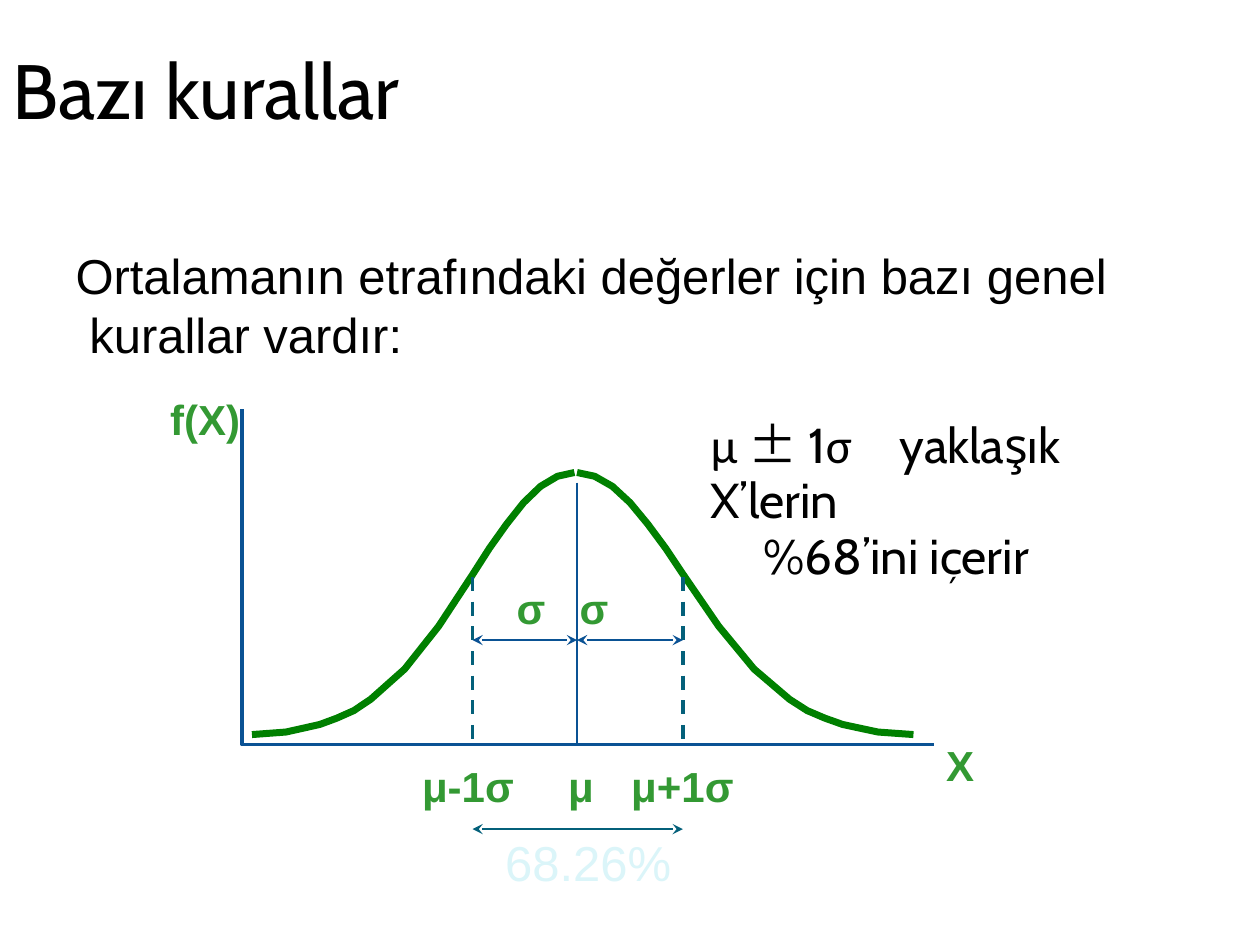
from typing import NamedTuple, Optional

from lxml import etree
from pptx import Presentation
from pptx import util as u
from pptx.dml.color import RGBColor
from pptx.enum import dml, shapes, text
from pptx.oxml import ns

COLORS = {"ink": "000000", "label": "339933", "curve": "008000",
          "axis": "0A5294", "bound": "04607A", "share": "DBF5F9"}

# Key positions of the diagram, in inches
AXIS_X, AXIS_TOP, AXIS_Y, AXIS_END = 1.92, 3.25, 5.91, 7.41
MEAN, LOW, HIGH = 4.58, 3.75, 5.42

# Half of the bell: grid steps away from the mean, and heights
STEPS = (0, 1, 2, 3, 4, 5, 6, 8, 10, 12, 13, 14, 15, 16, 17, 19)
BELL = (3.75, 3.78, 3.86, 3.99, 4.16, 4.35, 4.56, 4.97,
        5.31, 5.55, 5.64, 5.7, 5.75, 5.78, 5.81, 5.83)


class Label(NamedTuple):
    words: str
    left: float
    top: float
    width: float
    tab: Optional[float] = None


class Line(NamedTuple):
    start: tuple
    end: tuple
    color: str
    width: float
    dashed: bool = False
    arrows: bool = False


LABELS = [
    Label("f(X)", 1.34, 3.11, 0.58),
    Label("X", 7.5, 5.86, 0.25),
    Label("μ\tμ+1σ", 4.5, 6.03, 1.51, 0.68),
    Label("μ-1σ", 3.34, 6.03, 0.76),
    Label("σ\tσ", 4.09, 4.61, 1.01, 0.76),
]

LINES = [
    Line((MEAN, 3.83), (MEAN, AXIS_Y), "axis", 1),
    *[Line((x, 4.58), (x, AXIS_Y), "bound", 2, dashed=True)
      for x in (LOW, HIGH)],
    Line((LOW, 5.08), (MEAN, 5.08), "axis", 1, arrows=True),
    Line((MEAN, 5.08), (HIGH, 5.08), "axis", 1, arrows=True),
    Line((LOW, 6.58), (HIGH, 6.58), "bound", 1, arrows=True),
]


def rgb(name: str) -> RGBColor:
    return RGBColor.from_string(COLORS[name])


def add_box(s, left: float, top: float, width: float, height: float,
            wrap: bool = True):
    """Add an empty text box and return its text frame."""
    box = s.shapes.add_textbox(*map(u.Inches, (left, top, width, height)))
    tf = box.text_frame
    tf.margin_left = tf.margin_right = tf.margin_bottom = 0
    tf.margin_top = u.Inches(0.01)
    tf.word_wrap = wrap
    tf.auto_size = text.MSO_AUTO_SIZE.NONE
    return tf


def write(p, *runs, size: float, color: str = "ink", bold: bool = False,
          before: float = 0, spacing: Optional[float] = None,
          left: float = 0.01, indent: float = 0, tab: Optional[float] = None):
    """Fill a paragraph with (words, font) runs."""
    p.space_before = u.Pt(before)
    if spacing:
        p.line_spacing = u.Pt(spacing)
    pPr = p._p.get_or_add_pPr()
    pPr.set("marL", str(u.Inches(left)))
    pPr.set("indent", str(u.Inches(indent)))
    if tab:
        tabs = etree.SubElement(pPr, ns.qn("a:tabLst"))
        etree.SubElement(tabs, ns.qn("a:tab"), pos=str(u.Inches(tab)), algn="l")
    for words, font in runs:
        r = p.add_run()
        r.text = words
        r.font.name, r.font.size, r.font.bold = font, u.Pt(size), bold
        r.font.color.rgb = rgb(color)


def add_path(s, points: list, color: str, width: float):
    """Draw an open, unfilled outline through points given in inches."""
    first, *rest = [(u.Inches(x), u.Inches(y)) for x, y in points]
    builder = s.shapes.build_freeform(*first)
    builder.add_line_segments(rest, close=False)
    sp = builder.convert_to_shape()
    sp.shadow.inherit = False
    sp.fill.background()
    sp.line.color.rgb = rgb(color)
    sp.line.width = u.Pt(width)


def add_line(s, line: Line):
    cx = s.shapes.add_connector(shapes.MSO_CONNECTOR.STRAIGHT,
                                *map(u.Inches, line.start + line.end))
    cx.line.color.rgb = rgb(line.color)
    cx.line.width = u.Pt(line.width)
    if line.dashed:
        cx.line.dash_style = dml.MSO_LINE.DASH
    if line.arrows:
        for end in ("a:headEnd", "a:tailEnd"):
            etree.SubElement(cx.line._ln, ns.qn(end), type="stealth")
    etree.SubElement(cx._element.spPr, ns.qn("a:effectLst"))


def main():
    prs = Presentation()
    prs.slide_width, prs.slide_height = u.Inches(10), u.Inches(7.5)
    s = prs.slides.add_slide(prs.slide_layouts[6])

    # Title and introduction
    tf = add_box(s, 0.09, 0.33, 3.12, 0.76, wrap=False)
    write(tf.paragraphs[0], ("Bazı kurallar", "Cabin"), size=44, before=1.1)
    tf = add_box(s, 0.59, 1.94, 8.23, 0.96)
    write(tf.paragraphs[0],
          ("Ortalamanın etrafındaki değerler için bazı genel kurallar vardır:",
           "Arial"),
          size=28, before=0.9, left=0.12, indent=-0.11)

    # Rule beside the curve
    tf = add_box(s, 5.63, 3.3, 3.61, 0.91)
    write(tf.paragraphs[0], ("μ ", "Calibri"), ("± ", "Noto Sans CJK TC"),
          ("1", "Cabin"), ("σ\t", "Calibri"), ("yaklaşık X’lerin", "Cabin"),
          size=28, before=0.9, spacing=31.9, tab=1.28)
    write(tf.add_paragraph(), ("%68’ini içerir", "Cabin"),
          size=28, spacing=31.9, left=0.43)

    # Axes and the two halves of the bell
    add_path(s, [(AXIS_X, AXIS_TOP), (AXIS_X, AXIS_Y), (AXIS_END, AXIS_Y)],
             "axis", 2)
    for peak, tail in ((4.58, 7.25), (4.56, 2)):
        step = (tail - peak) / STEPS[-1]
        add_path(s, [(peak + n * step, y) for n, y in zip(STEPS, BELL)],
                 "curve", 4)

    # Mean, bounds and spans
    for line in LINES:
        add_line(s, line)

    # Diagram labels
    for label in LABELS:
        tf = add_box(s, label.left, label.top, label.width, 0.43, wrap=False)
        write(tf.paragraphs[0], (label.words, "Arial"), size=24, bold=True,
              color="label", before=1, tab=label.tab)
    tf = add_box(s, 4, 6.6, 1.4, 0.5, wrap=False)
    write(tf.paragraphs[0], ("68.26%", "Arial"), size=28, color="share",
          before=0.9)

    prs.save("out.pptx")


if __name__ == "__main__":
    main()
